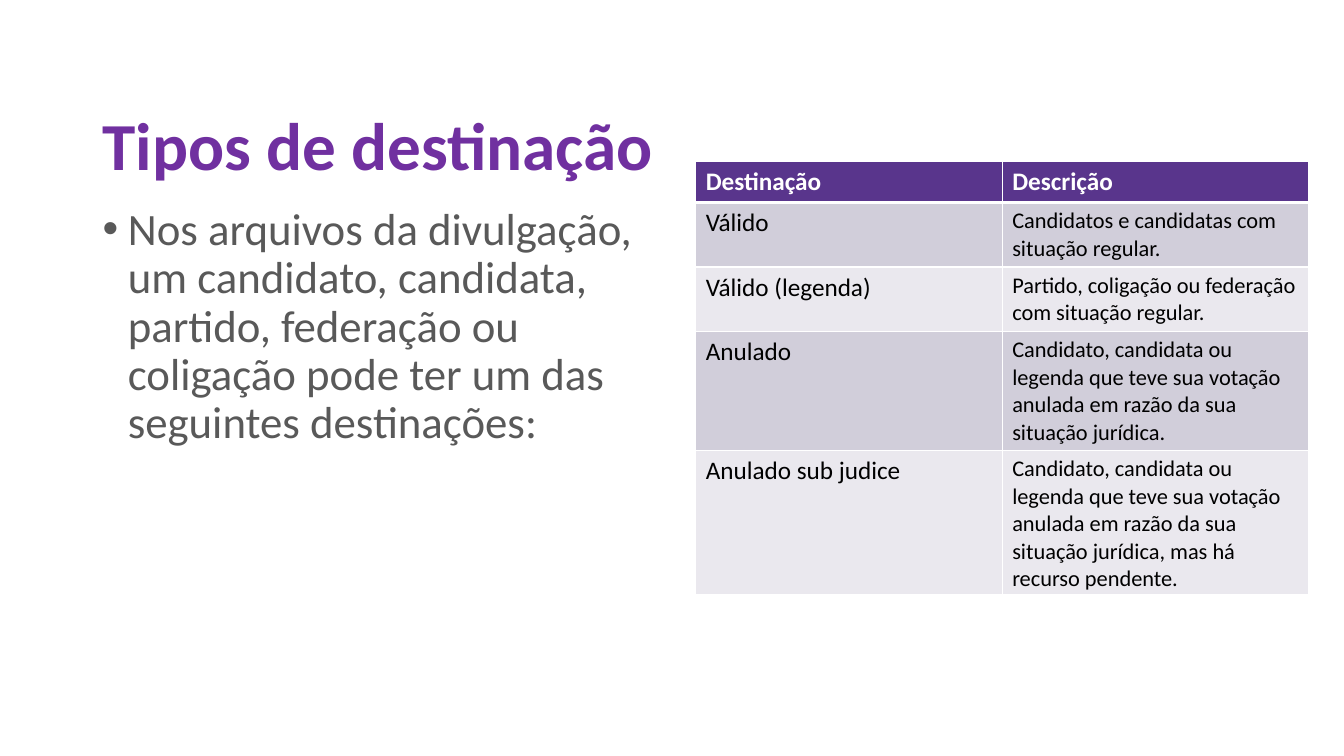
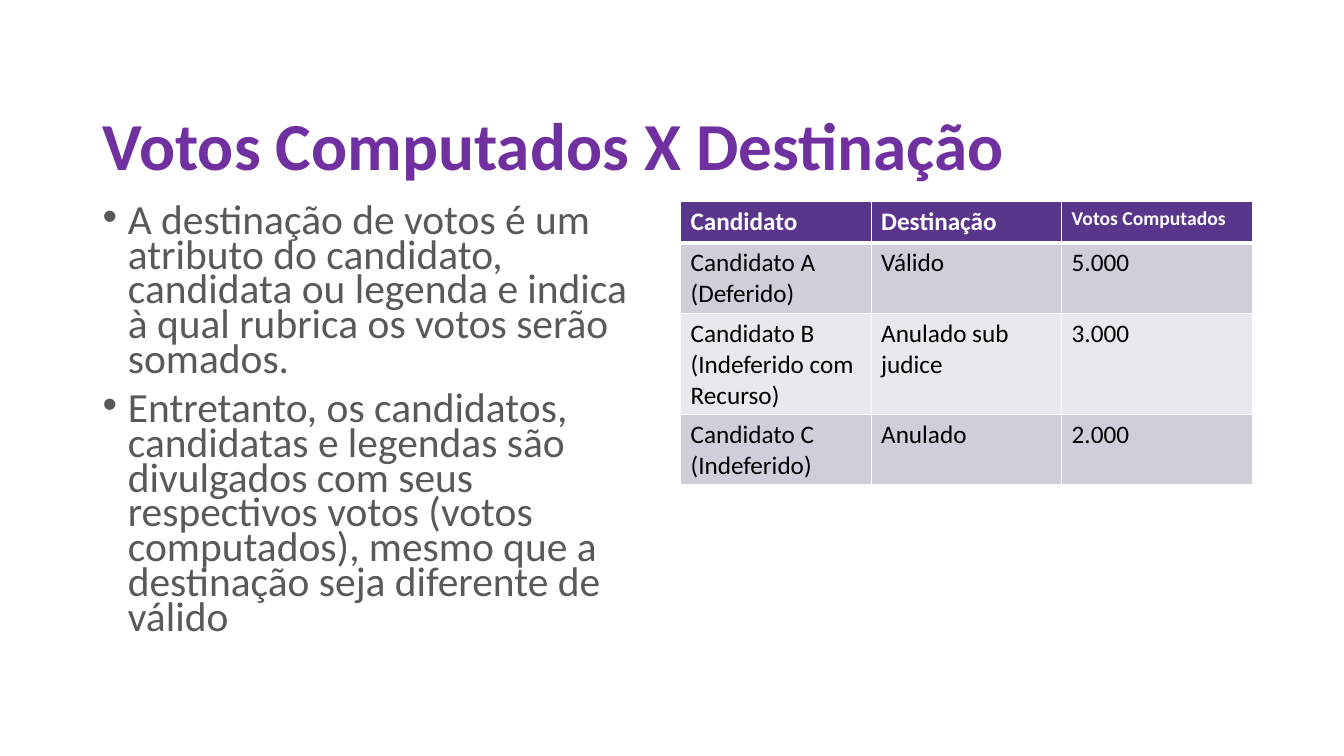
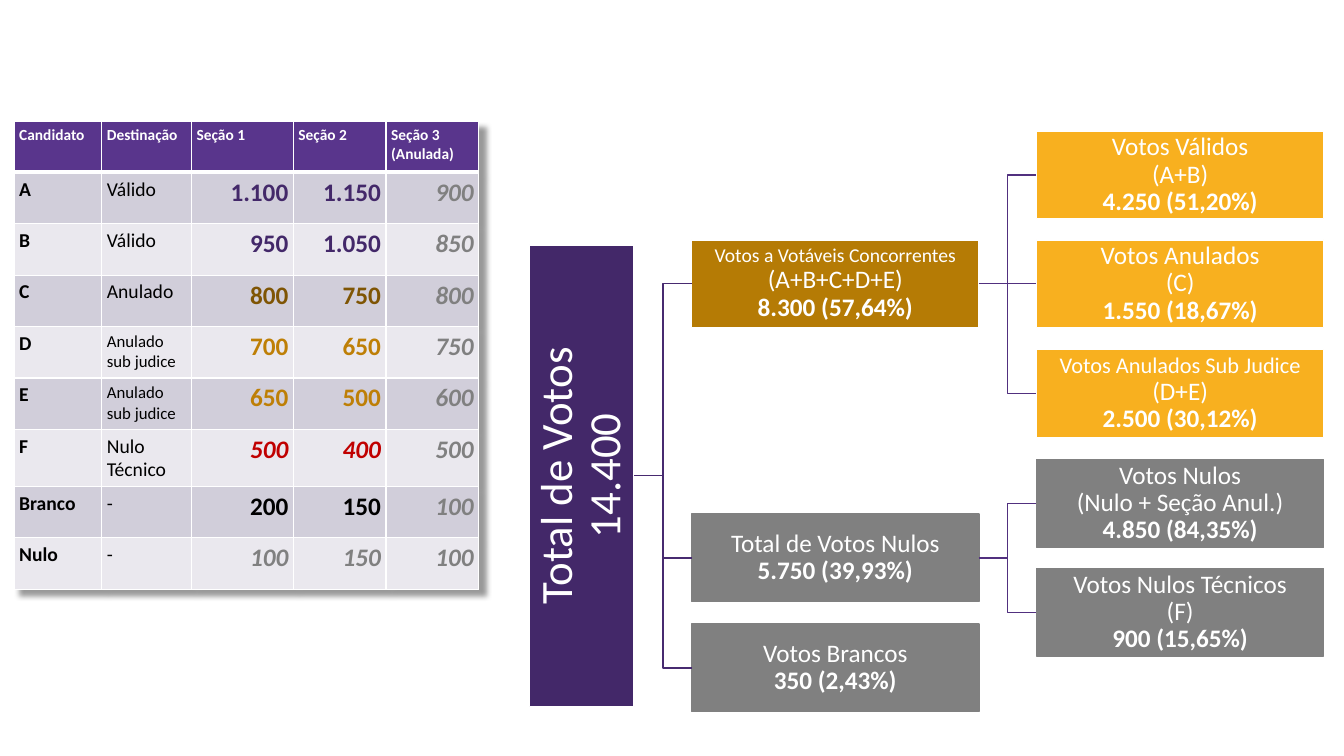
from lxml.etree import SubElement
from pptx import Presentation
from pptx.dml.color import RGBColor
from pptx.enum.shapes import MSO_CONNECTOR as CONNECTOR, MSO_SHAPE as SHAPE
from pptx.enum.text import MSO_ANCHOR as ANCHOR, PP_ALIGN as ALIGN
from pptx.oxml import parse_xml
from pptx.oxml.ns import nsdecls, qn
from pptx.util import Pt

PX = 9144  # 100 px to the inch
FONT = "Calibri"
WHITE = RGBColor(0xFF, 0xFF, 0xFF)
BLACK = RGBColor(0x00, 0x00, 0x00)
TITLE_PURPLE = RGBColor(0x70, 0x30, 0xA0)
BODY_GRAY = RGBColor(0x59, 0x59, 0x59)
HEADER_PURPLE = RGBColor(0x59, 0x35, 0x8C)
BAND_DARK = RGBColor(0xD1, 0xCE, 0xDA)
BAND_LIGHT = RGBColor(0xEA, 0xE8, 0xEE)
DEEP_PURPLE = RGBColor(0x43, 0x28, 0x69)
ROOT_LINE = RGBColor(0x47, 0x2A, 0x70)
BRANCH_LINE = RGBColor(0x51, 0x30, 0x7F)
BROWN = RGBColor(0x7F, 0x55, 0x04)
OCHRE = RGBColor(0xBE, 0x7F, 0x06)
DARK_OCHRE = RGBColor(0xB5, 0x7B, 0x05)
AMBER = RGBColor(0xF8, 0xB0, 0x1F)
RED = RGBColor(0xC0, 0x00, 0x00)
GRAY = RGBColor(0x80, 0x80, 0x80)


def style_text(frame, size, color, bold=False, italic=False):
    for paragraph in frame.paragraphs:
        for run in paragraph.runs:
            font = run.font
            font.name, font.size, font.color.rgb = FONT, Pt(size), color
            font.bold, font.italic = bold, italic


def add_banded_table(slide, left, top, widths, heights, rows, header_size=18, body_size=18):
    """Add a table with a purple header, two alternating bands and white rules."""
    table = slide.shapes.add_table(
        len(rows), len(widths), left * PX, top * PX, sum(widths) * PX, sum(heights) * PX).table
    for column, width in zip(table.columns, widths):
        column.width = width * PX
    for r, (height, row) in enumerate(zip(heights, rows)):
        table.rows[r].height = height * PX
        for c, text in enumerate(row):
            cell = table.cell(r, c)
            cell.text_frame.text = text
            if r == 0:
                style_text(cell.text_frame, header_size, WHITE, bold=True)
            else:
                style_text(cell.text_frame, body_size, BLACK)
            for side in ("lnL", "lnR", "lnT", "lnB"):
                thick = (r, side) in ((0, "lnB"), (1, "lnT"))
                rule = SubElement(cell._tc.get_or_add_tcPr(), qn(f"a:{side}"), w=str(Pt(3 if thick else 1)))
                SubElement(SubElement(rule, qn("a:solidFill")), qn("a:srgbClr"), val=str(WHITE))
            cell.fill.solid()
            cell.fill.fore_color.rgb = HEADER_PURPLE if r == 0 else BAND_DARK if r % 2 else BAND_LIGHT
    return table


prs = Presentation()
prs.slide_width, prs.slide_height = 1333 * PX, 750 * PX
blank = prs.slide_layouts[6]

# Slides 1 and 2: title, bullets and table
destination_rows = [
    ("Destinação", "Descrição"),
    ("Válido", "Candidatos e candidatas com situação regular."),
    ("Válido (legenda)", "Partido, coligação ou federação com situação regular."),
    ("Anulado", "Candidato, candidata ou legenda que teve sua votação anulada em razão da sua "
                "situação jurídica."),
    ("Anulado sub judice", "Candidato, candidata ou legenda que teve sua votação anulada em razão "
                           "da sua situação jurídica, mas há recurso pendente."),
]
computed_rows = [
    ("Candidato", "Destinação", "Votos Computados"),
    ("Candidato A\n(Deferido)", "Válido", "5.000"),
    ("Candidato B\n(Indeferido com Recurso)", "Anulado sub judice", "3.000"),
    ("Candidato C\n(Indeferido)", "Anulado", "2.000"),
]
topics = [
    ("Tipos de destinação",
     ["Nos arquivos da divulgação, um candidato, candidata, partido, federação ou coligação pode "
      "ter um das seguintes destinações:"],
     32, 0.9, (690, 160, [304] * 2, [41, 64, 64, 118, 140], destination_rows)),
    ("Votos Computados X Destinação",
     ["A destinação de votos é um atributo do candidato, candidata ou legenda e indica à qual "
      "rubrica os votos serão somados.",
      "Entretanto, os candidatos, candidatas e legendas são divulgados com seus respectivos votos "
      "(votos computados), mesmo que a destinação seja diferente de válido"],
     29.6, 0.7, (675, 200, [189] * 3, [41, 70, 100, 70], computed_rows)),
]
topic_tables = []
for title, bullets, bullet_size, spacing, table_layout in topics:
    slide = prs.slides.add_slide(blank)
    heading = slide.shapes.add_textbox(92 * PX, 111 * PX, 1150 * PX, 74 * PX).text_frame
    heading.word_wrap = True
    heading.vertical_anchor = ANCHOR.MIDDLE
    heading.text = title
    heading.paragraphs[0].line_spacing = 0.9
    style_text(heading, 48, TITLE_PURPLE, bold=True)

    body = slide.shapes.add_textbox(92 * PX, 200 * PX, 567 * PX, 476 * PX).text_frame
    body.word_wrap = True
    body.text = "\n".join(bullets)
    for i, paragraph in enumerate(body.paragraphs):
        props = paragraph._p.get_or_add_pPr()
        props.set("marL", str(25 * PX))
        props.set("indent", str(-25 * PX))
        SubElement(props, qn("a:buFont"), typeface="Arial")
        SubElement(props, qn("a:buChar"), char="•")
        paragraph.line_spacing = spacing
        paragraph.space_before = Pt(10 if i else 0)
    style_text(body, bullet_size, BODY_GRAY)
    topic_tables.append(add_banded_table(slide, *table_layout))

destination_table, computed_table = topic_tables
for r in range(1, len(destination_rows)):
    style_text(destination_table.cell(r, 1).text_frame, 16, BLACK)
style_text(computed_table.cell(0, 2).text_frame, 14, WHITE, bold=True)

# Slide 3: votes by section and the tree of totals
slide = prs.slides.add_slide(blank)
section_rows = [
    ("Candidato", "Destinação", "Seção 1", "Seção 2", "Seção 3\n(Anulada)"),
    ("A", "Válido", "1.100", "1.150", "900"),
    ("B", "Válido", "950", "1.050", "850"),
    ("C", "Anulado", "800", "750", "800"),
    ("D", "Anulado sub judice", "700", "650", "750"),
    ("E", "Anulado sub judice", "650", "500", "600"),
    ("F", "Nulo Técnico", "500", "400", "500"),
    ("Branco", "-", "200", "150", "100"),
    ("Nulo", "-", "100", "150", "100"),
]
vote_colors = [DEEP_PURPLE, DEEP_PURPLE, BROWN, OCHRE, OCHRE, RED, BLACK, GRAY]
section_table = add_banded_table(
    slide, 14, 120, [87, 89, 101, 92, 92], [51] * 6 + [54] + [51] * 2, section_rows, 11, 14)
section_table._tbl.tblPr.insert(0, parse_xml(
    f'<a:effectLst {nsdecls("a")}><a:outerShdw blurRad="50800" dist="76200" dir="2700000" algn="tl">'
    '<a:prstClr val="black"><a:alpha val="40000"/></a:prstClr></a:outerShdw></a:effectLst>'))
for cell in section_table.iter_cells():
    cell.margin_left = cell.margin_right = cell.margin_top = cell.margin_bottom = 5 * PX
for r, vote_color in enumerate(vote_colors, 1):
    style_text(section_table.cell(r, 0).text_frame, 14, BLACK, bold=True)
    if section_rows[r][1] == "Anulado sub judice":
        style_text(section_table.cell(r, 1).text_frame, 12, BLACK)
    for c in (2, 3, 4):
        votes = section_table.cell(r, c).text_frame
        votes.paragraphs[0].alignment = ALIGN.RIGHT
        color = GRAY if c == 4 else vote_color
        style_text(votes, 18, color, bold=True, italic=color in (GRAY, RED))

MIDDLE, RIGHT = 686, 1028
# key: parent, left, top, fill, first line size, lines
totals = {
    "all": (None, 525, 243, DEEP_PURPLE, 32, ["Total de Votos", "14.400"]),
    "eligible": ("all", MIDDLE, 238, DARK_OCHRE, 14,
                 ["Votos a Votáveis Concorrentes", "(A+B+C+D+E)", "8.300 (57,64%)"]),
    "valid": ("eligible", RIGHT, 130, AMBER, 18, ["Votos Válidos", "(A+B)", "4.250 (51,20%)"]),
    "annulled": ("eligible", RIGHT, 238, AMBER, 18, ["Votos Anulados", "(C)", "1.550 (18,67%)"]),
    "sub judice": ("eligible", RIGHT, 347, AMBER, 16,
                   ["Votos Anulados Sub Judice", "(D+E)", "2.500 (30,12%)"]),
    "null total": ("all", MIDDLE, 510, GRAY, 18, ["Total de Votos Nulos", "5.750 (39,93%)"]),
    "null": ("null total", RIGHT, 456, GRAY, 18,
             ["Votos Nulos", "(Nulo + Seção Anul.)", "4.850 (84,35%)"]),
    "technical": ("null total", RIGHT, 564, GRAY, 18,
                  ["Votos Nulos Técnicos", "(F)", "900 (15,65%)"]),
    "blank": ("all", MIDDLE, 619, GRAY, 18, ["Votos Brancos", "350 (2,43%)"]),
}
boxes = {}
for key, (parent, left, top, fill, first_size, lines) in totals.items():
    width, height = (285, 87) if parent else (104, 458)
    box = slide.shapes.add_shape(SHAPE.RECTANGLE, left * PX, top * PX, width * PX, height * PX)
    boxes[key] = box
    box.shadow.inherit = False
    box.fill.solid()
    box.fill.fore_color.rgb = fill
    box.line.color.rgb = GRAY if fill == GRAY else WHITE
    box.line.width = Pt(1)
    label = box.text_frame
    label.word_wrap = True
    label.vertical_anchor = ANCHOR.MIDDLE
    label.margin_left = label.margin_right = label.margin_top = label.margin_bottom = PX
    paragraph = label.paragraphs[0]
    paragraph.text = "\v".join(lines)
    paragraph.alignment = ALIGN.CENTER
    paragraph.line_spacing = 0.9
    style_text(label, 18 if parent else 32, WHITE)
    paragraph.runs[0].font.size = Pt(first_size)
    if not parent:
        label._txBody.bodyPr.set("vert", "vert270")
        continue
    paragraph.runs[-1].font.bold = True

    level = top == totals[parent][2]
    branch = slide.shapes.add_connector(CONNECTOR.STRAIGHT if level else CONNECTOR.ELBOW, 0, 0, 0, 0)
    branch.begin_connect(boxes[parent], 3)
    branch.end_connect(box, 1)
    branch.line.color.rgb = ROOT_LINE if parent == "all" else BRANCH_LINE
    branch.line.width = Pt(1)
    SubElement(branch._element.spPr, qn("a:effectLst"))

prs.save("out.pptx")
